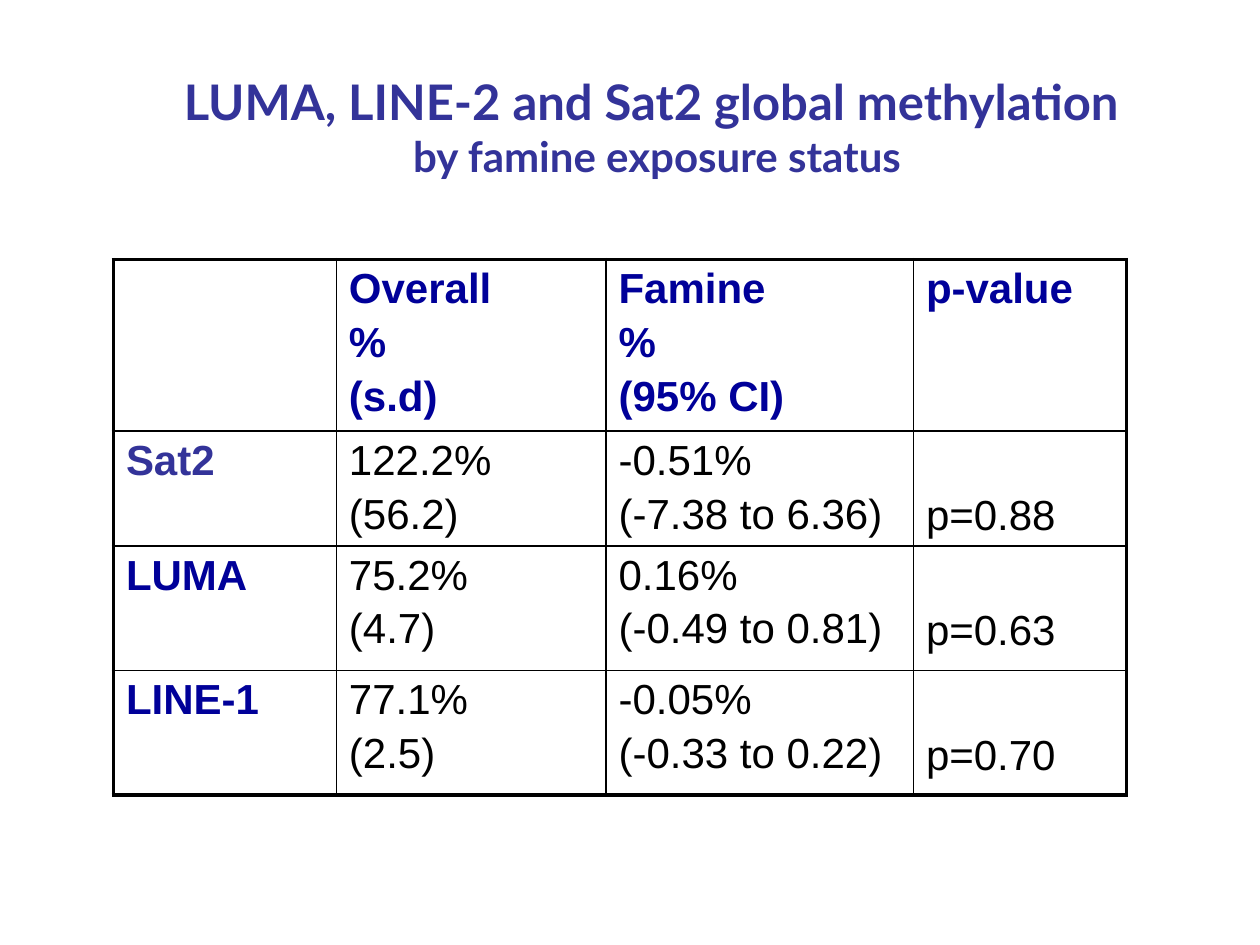
from dataclasses import dataclass

from lxml import etree
from pptx import Presentation
from pptx import util as u
from pptx.dml.color import RGBColor
from pptx.enum import text
from pptx.oxml.ns import qn


@dataclass(frozen=True)
class Theme:
    title_font: str = "Lato"
    table_font: str = "Arial"
    violet: str = "333399"
    navy: str = "000099"
    black: str = "000000"
    title_size: int = 28
    body_size: int = 24
    paragraph_gap: int = 4
    outer_border: float = 2.25
    inner_border: float = 1


THEME = Theme()

COLUMN_WIDTHS = (1.77, 2.14, 2.44, 1.69)
ROW_HEIGHTS = (1.36, 0.9, 0.99, 0.99)
CELL_MARGIN_TOP = 0.05
SECOND_LINE_OFFSET = 0.44

HEADERS = ("", "Overall\n%\n(s.d)", "Famine\n%\n(95% CI)", "p-value")
RESULTS = (
    ("Sat2", "122.2%\n(56.2)", "-0.51%\n(-7.38 to 6.36)", "p=0.88"),
    ("LUMA", "75.2%\n(4.7)", "0.16%\n(-0.49 to 0.81)", "p=0.63"),
    ("LINE-1", "77.1%\n(2.5)", "-0.05%\n(-0.33 to 0.22)", "p=0.70"),
)


def add_text(paragraph, content, *, font, size, color, bold=False):
    run = paragraph.add_run()
    run.text = content
    run.font.name = font
    run.font.size = u.Pt(size)
    run.font.bold = bold
    run.font.color.rgb = RGBColor.from_string(color)


def set_borders(cell, widths):
    """Draw the left, right, top and bottom cell borders, in that order."""
    properties = cell._tc.get_or_add_tcPr()
    for position, (side, width) in enumerate(zip("LRTB", widths)):
        line = etree.Element(qn(f"a:ln{side}"), w=str(u.Pt(width)))
        fill = etree.SubElement(line, qn("a:solidFill"))
        etree.SubElement(fill, qn("a:srgbClr"), val=THEME.black)
        properties.insert(position, line)


def fill_cell(cell, content, color, bold):
    if not content:
        return
    frame = cell.text_frame
    for index, line in enumerate(content.split("\n")):
        paragraph = frame.add_paragraph() if index else frame.paragraphs[0]
        paragraph.space_before = u.Pt(THEME.paragraph_gap)
        add_text(paragraph, line, font=THEME.table_font,
                 size=THEME.body_size, color=color, bold=bold)


def build_title(slide, left, top, width, height):
    title = slide.shapes.title
    title.left, title.top = u.Inches(left), u.Inches(top)
    title.width, title.height = u.Inches(width), u.Inches(height)
    frame = title.text_frame
    frame.word_wrap = True
    frame.auto_size = text.MSO_AUTO_SIZE.NONE
    frame.vertical_anchor = text.MSO_ANCHOR.MIDDLE
    paragraph = frame.paragraphs[0]
    paragraph.alignment = text.PP_ALIGN.CENTER
    style = dict(font=THEME.title_font, color=THEME.violet, bold=True)
    add_text(paragraph, "LUMA, LINE-2 and Sat2 global methylation ",
             size=THEME.title_size, **style)
    paragraph.add_line_break()
    add_text(paragraph, "by famine exposure status",
             size=THEME.body_size, **style)


def build_table(slide, left, top, width, height):
    rows = (HEADERS, *RESULTS)
    last_row, last_column = len(rows) - 1, len(HEADERS) - 1
    table = slide.shapes.add_table(
        len(rows), len(HEADERS), u.Inches(left), u.Inches(top),
        u.Inches(width), u.Inches(height)).table
    table.horz_banding = False

    # Scale the column and row proportions to the given box
    for column, share in zip(table.columns, COLUMN_WIDTHS):
        column.width = u.Inches(width * share / sum(COLUMN_WIDTHS))
    for row, share in zip(table.rows, ROW_HEIGHTS):
        row.height = u.Inches(height * share / sum(ROW_HEIGHTS))

    for r, values in enumerate(rows):
        for c, value in enumerate(values):
            cell = table.cell(r, c)
            cell.fill.background()
            heading = r == 0 or c == 0
            color = THEME.navy if heading else THEME.black
            if value == "Sat2":
                color = THEME.violet
            fill_cell(cell, value, color, heading)

            # p-values line up with the second line of their row
            offset = SECOND_LINE_OFFSET if r and c == last_column else 0
            cell.margin_top = u.Inches(CELL_MARGIN_TOP + offset)

            # The frame is heavier than the inner grid
            edges = (c == 0, c == last_column, r == 0, r == last_row)
            set_borders(cell, [THEME.outer_border if edge
                               else THEME.inner_border for edge in edges])


def main():
    presentation = Presentation()
    presentation.slide_width = u.Inches(10)
    presentation.slide_height = u.Inches(7.5)
    slide = presentation.slides.add_slide(presentation.slide_layouts[5])
    build_title(slide, 0.43, 0.42, 9.57, 1.16)
    build_table(slide, 0.9, 2.06, sum(COLUMN_WIDTHS), sum(ROW_HEIGHTS))
    presentation.save("out.pptx")


if __name__ == "__main__":
    main()
